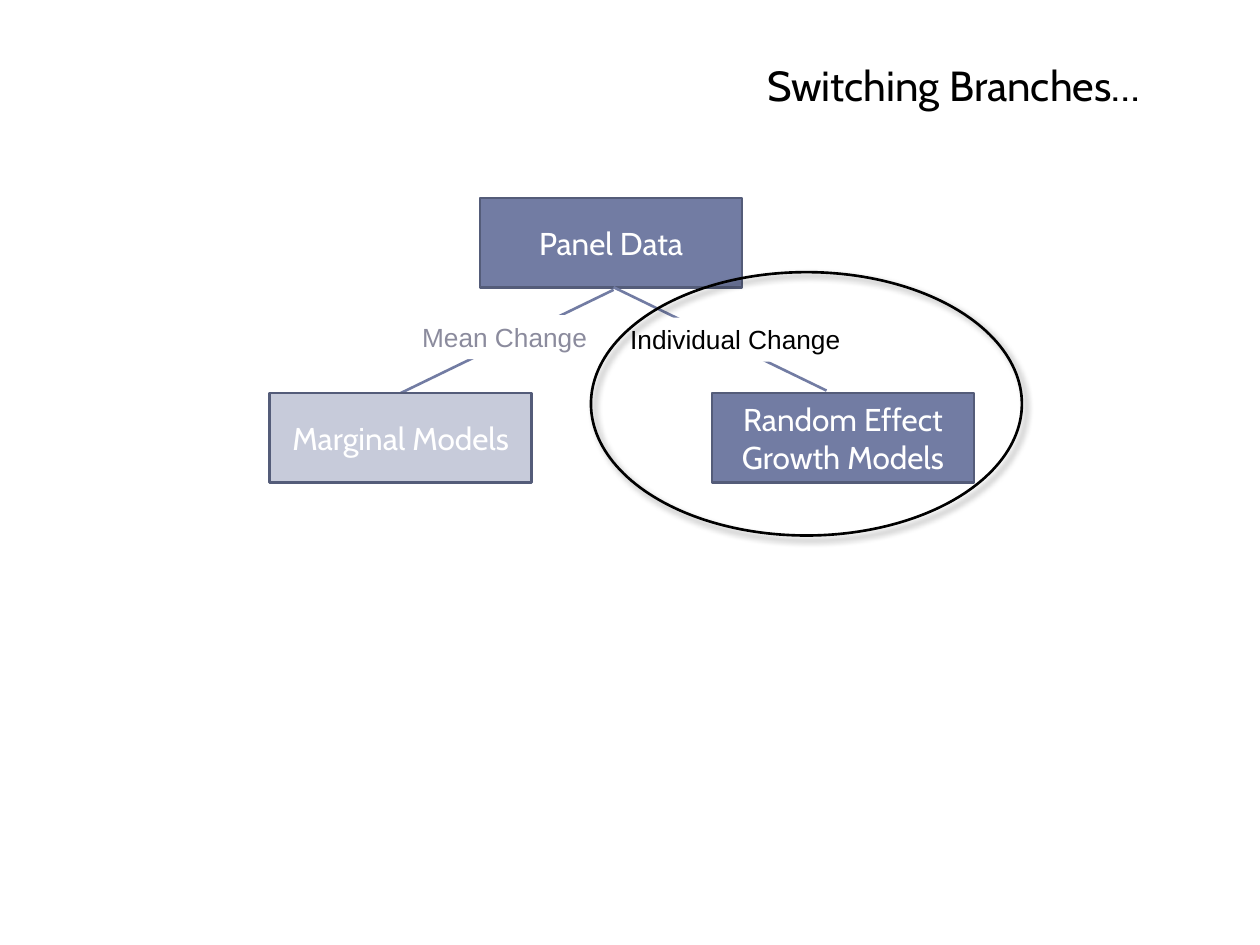
from pptx import Presentation
from pptx import util as u
from pptx.dml.color import RGBColor
from pptx.enum import shapes, text
from pptx.oxml import parse_xml
from pptx.oxml.ns import nsdecls

COLORS = {
    "node": "727CA3",
    "faded_node": "C7CBDA",
    "node_border": "545C79",
    "faded_text": "8B8B9D",
    "black": "000000",
    "white": "FFFFFF",
}
NODE_WIDTH, NODE_HEIGHT = 2.08, 0.71
LINE_WIDTH = u.Pt(1.5)


def color(name):
    return RGBColor.from_string(COLORS[name])


def write_text(shape, words, size=18, font="Cabin", fill="white",
               align=text.PP_ALIGN.CENTER, anchor=text.MSO_ANCHOR.MIDDLE, wrap=True):
    frame = shape.text_frame
    frame.word_wrap = wrap
    frame.vertical_anchor = anchor
    paragraph = frame.paragraphs[0]
    paragraph.alignment = align
    run = paragraph.add_run()
    run.text = words
    run.font.size = u.Pt(size)
    run.font.name = font
    run.font.color.rgb = color(fill)


def add_box(slide, left, top, width, height, fill, border=None):
    shape = slide.shapes.add_shape(
        shapes.MSO_SHAPE.RECTANGLE,
        u.Inches(left), u.Inches(top), u.Inches(width), u.Inches(height))
    shape.shadow.inherit = False
    shape.fill.solid()
    shape.fill.fore_color.rgb = color(fill)
    if border:
        shape.line.color.rgb = color(border)
        shape.line.width = LINE_WIDTH
    else:
        shape.line.fill.background()
    return shape


def add_node(slide, words, left, top, fill="node"):
    node = add_box(slide, left, top, NODE_WIDTH, NODE_HEIGHT, fill, "node_border")
    write_text(node, words)


def add_label(slide, words, left, top, width, fill):
    label = add_box(slide, left, top, width, 0.35, "white")
    write_text(label, words, size=15, font="Arial", fill=fill,
               anchor=text.MSO_ANCHOR.TOP, wrap=False)


def add_branch(slide, x1, y1, x2, y2):
    branch = slide.shapes.add_connector(
        shapes.MSO_CONNECTOR.STRAIGHT,
        u.Inches(x1), u.Inches(y1), u.Inches(x2), u.Inches(y2))
    branch.line.color.rgb = color("node")
    branch.line.width = LINE_WIDTH
    branch._element.spPr.append(parse_xml(f"<a:effectLst {nsdecls('a')}/>"))


def add_highlight(slide, left, top, width, height):
    ellipse = slide.shapes.add_shape(
        shapes.MSO_SHAPE.OVAL,
        u.Inches(left), u.Inches(top), u.Inches(width), u.Inches(height))
    ellipse.fill.background()
    ellipse.line.color.rgb = color("black")
    ellipse.line.width = LINE_WIDTH
    ellipse._element.spPr.append(parse_xml(
        f'<a:effectLst {nsdecls("a")}>'
        f'<a:outerShdw blurRad="{u.Pt(4)}" dist="{u.Pt(3)}" dir="2700000"'
        ' algn="tl" rotWithShape="0">'
        f'<a:srgbClr val="{COLORS["black"]}"><a:alpha val="40000"/></a:srgbClr>'
        "</a:outerShdw></a:effectLst>"))


def set_title(slide, words):
    title = slide.shapes.title
    title.left, title.top = u.Inches(5.99), u.Inches(0.42)
    title.width, title.height = u.Inches(3.87), u.Inches(0.5)
    write_text(title, words, size=24, fill="black",
               align=text.PP_ALIGN.LEFT, anchor=text.MSO_ANCHOR.TOP)
    title.text_frame.auto_size = text.MSO_AUTO_SIZE.NONE


def main():
    presentation = Presentation()
    presentation.slide_width = u.Inches(10)
    presentation.slide_height = u.Inches(7.5)
    slide = presentation.slides.add_slide(presentation.slide_layouts[5])
    set_title(slide, "Switching Branches…")

    # Tree: root, two branches, two leaves
    add_node(slide, "Panel Data", 3.81, 1.57)
    add_branch(slide, 4.87, 2.3, 3.18, 3.12)
    add_branch(slide, 6.56, 3.1, 4.87, 2.28)
    add_node(slide, "Random Effect Growth Models", 5.65, 3.12)
    add_node(slide, "Marginal Models", 2.14, 3.12, fill="faded_node")

    # Branch labels
    add_label(slide, "Mean Change", 3.24, 2.5, 1.53, "faded_text")
    add_label(slide, "Individual Change", 4.89, 2.52, 1.89, "black")

    # Ring around the active branch
    add_highlight(slide, 4.69, 2.16, 3.42, 2.09)

    presentation.save("out.pptx")


if __name__ == "__main__":
    main()
